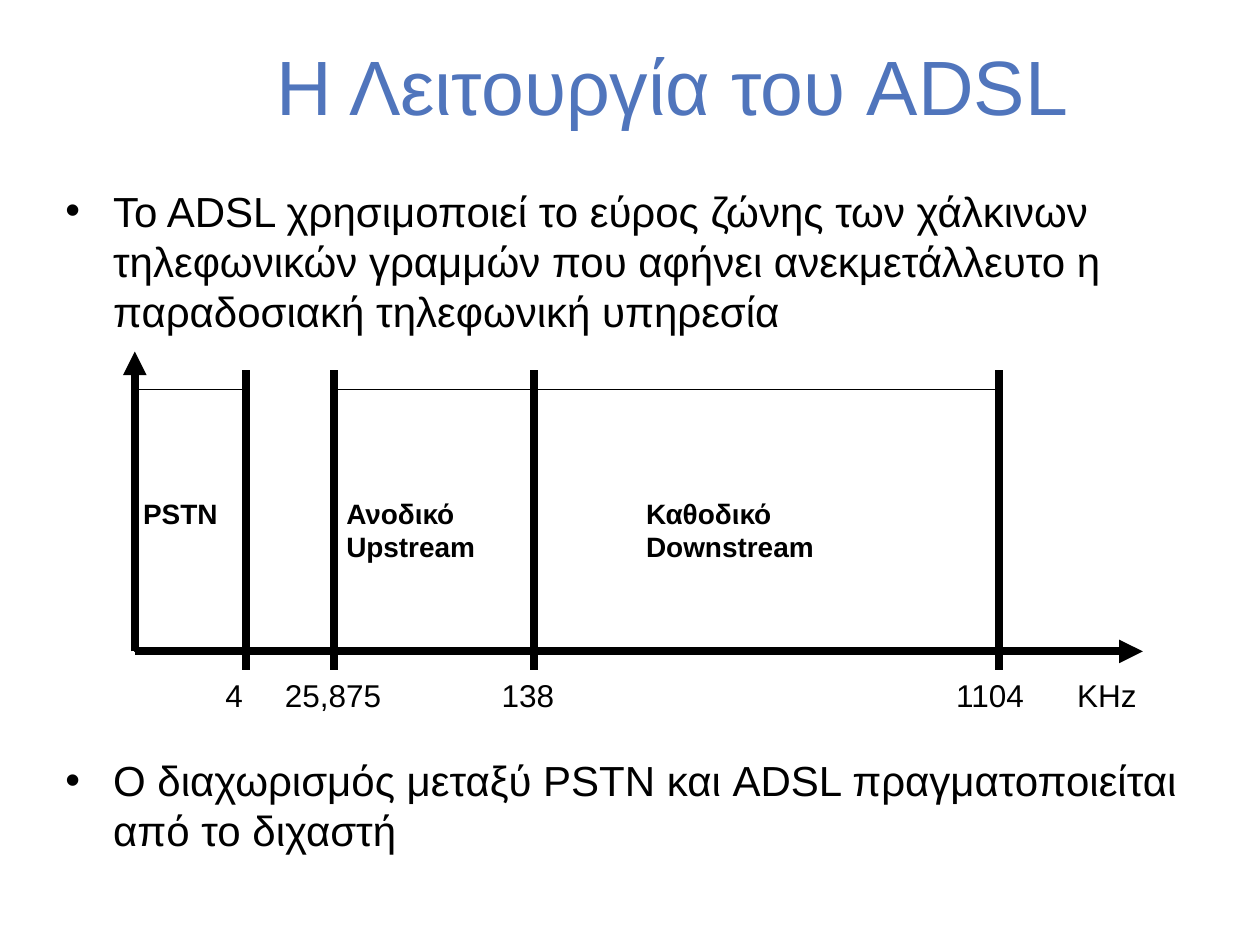
from dataclasses import dataclass

from lxml import etree
from pptx import Presentation
from pptx import util as u
from pptx.dml.color import RGBColor
from pptx.enum import shapes, text
from pptx.oxml.ns import qn

COLORS = {"title": "5075BC", "ink": "000000"}
FONT = "Arial"
THICK, THIN = 4.5, 0.75
TITLE = "Η Λειτουργία του ADSL"
BULLETS = [
    "To ADSL χρησιμοποιεί το εύρος ζώνης των χάλκινων τηλεφωνικών γραμμών "
    "που αφήνει ανεκμετάλλευτο η παραδοσιακή τηλεφωνική υπηρεσία",
    "Ο διαχωρισμός μεταξύ PSTN και ADSL πραγματοποιείται από το διχαστή",
]
EDGES = [11, 19.75, 39.6, 85.75]
TICKS = [("4", 7.75, 5.1), ("25,875", 13.65, 12.1), ("138", 35.15, 7.75),
         ("1104", 80.25, 9.25), ("KHz", 92.25, 8.5)]
BANDS = [
    (0, EDGES[0], -0.4, 10, ["PSTN"]),
    (EDGES[1], EDGES[2], EDGES[1], 15.5, ["Ανοδικό", "Upstream"]),
    (EDGES[2], EDGES[3], 49.5, 19.4, ["Καθοδικό", "Downstream"]),
]
BAND_TOP, MARK_TOP, MARK_END, LABEL_TOP = 12.6, 6.3, 106.3, 46.2


@dataclass
class Box:
    """A region in inches, addressed in percent of its width and height."""

    left: float
    top: float
    width: float
    height: float

    def at(self, x, y):
        """Return the point at x and y percent."""
        return (u.Inches(self.left + self.width * x / 100),
                u.Inches(self.top + self.height * y / 100))

    def across(self, share):
        """Return a percentage of the width as a length."""
        return u.Inches(self.width * share / 100)

    def place(self, sp):
        """Make a shape fill the region."""
        sp.left, sp.top = self.at(0, 0)
        sp.width, sp.height = u.Inches(self.width), u.Inches(self.height)


def rgb(name):
    """Return a named colour."""
    return RGBColor.from_string(COLORS[name])


def add_run(p, words, size, color="ink", bold=False):
    """Add one formatted run to a paragraph."""
    r = p.add_run()
    r.text = words
    r.font.name, r.font.size, r.font.bold = FONT, u.Pt(size), bold
    r.font.color.rgb = rgb(color)


def add_line(s, start, end, width, arrow=False):
    """Draw a straight line, with an arrowhead at its end if asked."""
    sp = s.shapes.add_connector(shapes.MSO_CONNECTOR.STRAIGHT, *start, *end)
    sp.line.color.rgb, sp.line.width = rgb("ink"), u.Pt(width)
    if arrow:
        etree.SubElement(sp.line._get_or_add_ln(), qn("a:tailEnd"), type="triangle")
    etree.SubElement(sp._element.spPr, qn("a:effectLst"))


def add_label(s, point, width, lines, size, bold=False):
    """Write an unwrapped label in a box as tall as its lines."""
    height = u.Inches(0.1) + u.Pt(1.2 * size * len(lines))
    tf = s.shapes.add_textbox(*point, width, height).text_frame
    tf.word_wrap = False
    tf.auto_size = text.MSO_AUTO_SIZE.SHAPE_TO_FIT_TEXT
    for i, words in enumerate(lines):
        p = tf.add_paragraph() if i else tf.paragraphs[0]
        p.alignment = text.PP_ALIGN.LEFT
        add_run(p, words, size, bold=bold)


def add_title(s, box):
    """Format and fill the title placeholder."""
    sp = s.shapes.title
    box.place(sp)
    tf = sp.text_frame
    tf.vertical_anchor = text.MSO_ANCHOR.MIDDLE
    tf.auto_size = text.MSO_AUTO_SIZE.NONE
    p = tf.paragraphs[0]
    p.alignment, p.line_spacing = text.PP_ALIGN.CENTER, 0.9
    add_run(p, TITLE, 44, "title")


def add_bullets(s, box, gap):
    """Write the bullets, parted by a gap in points for the diagram."""
    sp = s.shapes.add_textbox(0, 0, 0, 0)
    box.place(sp)
    tf = sp.text_frame
    tf.word_wrap = True
    for i, words in enumerate(BULLETS):
        p = tf.add_paragraph() if i else tf.paragraphs[0]
        pPr = p._p.get_or_add_pPr()
        pPr.set("marL", str(u.Inches(0.38)))
        pPr.set("indent", str(-u.Inches(0.38)))
        etree.SubElement(pPr, qn("a:buFont"), typeface=FONT)
        etree.SubElement(pPr, qn("a:buChar"), char="•")
        if i:
            p.space_before = u.Pt(gap)
        add_run(p, words, 24)


def add_spectrum(s, box):
    """Draw the frequency bands between the two axes."""
    for left, right, label_left, label_width, lines in BANDS:
        x, y = box.at(left, BAND_TOP)
        x2, y2 = box.at(right, 100)
        sp = s.shapes.add_shape(shapes.MSO_SHAPE.RECTANGLE, x, y, x2 - x, y2 - y)
        sp.shadow.inherit = False
        sp.fill.background()
        sp.line.color.rgb, sp.line.width = rgb("ink"), u.Pt(THIN)
        add_label(s, box.at(label_left, LABEL_TOP), box.across(label_width),
                  lines, 16, bold=True)
    for end in [(0, 0), (100, 100)]:
        add_line(s, box.at(0, 100), box.at(*end), THICK, arrow=True)
    for x in EDGES:
        add_line(s, box.at(x, MARK_TOP), box.at(x, MARK_END), THICK)
    for words, x, width in TICKS:
        add_label(s, box.at(x, MARK_END), box.across(width), [words], 18)


def main():
    """Build and save the slide."""
    prs = Presentation()
    prs.slide_width, prs.slide_height = u.Inches(10), u.Inches(7.5)
    s = prs.slides.add_slide(prs.slide_layouts[5])
    add_title(s, Box(1.1, 0.28, 8.48, 0.88))
    add_bullets(s, Box(0.42, 1.42, 9.17, 5.67), gap=239)
    add_spectrum(s, Box(1.07, 2.79, 8, 2.38))
    prs.save("out.pptx")


if __name__ == "__main__":
    main()
